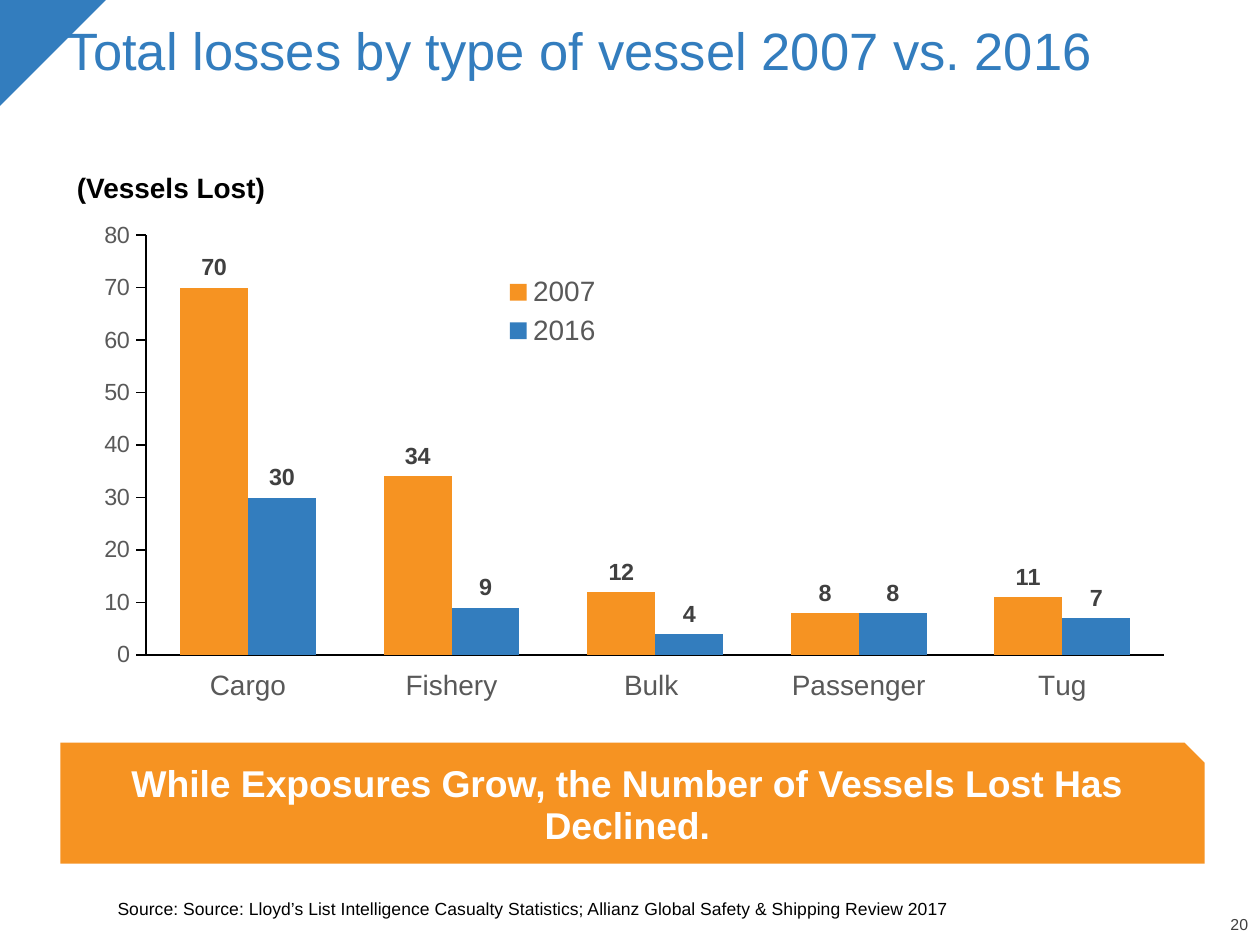
from pptx import Presentation
from pptx.chart.data import CategoryChartData
from pptx.dml.color import RGBColor
from pptx.enum.chart import XL_CHART_TYPE, XL_LABEL_POSITION, XL_LEGEND_POSITION, XL_TICK_LABEL_POSITION, XL_TICK_MARK
from pptx.enum.shapes import MSO_SHAPE as SHAPE
from pptx.enum.text import MSO_ANCHOR as ANCHOR, PP_ALIGN as ALIGN
from pptx.oxml import parse_xml
from pptx.oxml.ns import nsdecls
from pptx.util import Inches, Pt

BLUE = RGBColor(0x33, 0x7D, 0xBE)
ORANGE = RGBColor(0xF6, 0x93, 0x22)
BLACK = RGBColor(0, 0, 0)
WHITE = RGBColor(0xFF, 0xFF, 0xFF)
DARK_GRAY = RGBColor(0x40, 0x40, 0x40)
GRAY = RGBColor(0x59, 0x59, 0x59)
CHART_WIDTH, CHART_HEIGHT = 6.77, 3.21


def style(font, size, color, bold=False):
    font.name = "Arial"
    font.size = Pt(size)
    font.color.rgb = color
    font.bold = bold


def write(shape, text, size, color, bold=False, align=ALIGN.LEFT,
          anchor=ANCHOR.TOP, insets=(0.1, 0.05, 0.1, 0.05), spacing=0.9):
    frame = shape.text_frame
    frame.word_wrap = True
    frame.vertical_anchor = anchor
    frame.margin_left, frame.margin_top, frame.margin_right, frame.margin_bottom = map(Inches, insets)
    paragraph = frame.paragraphs[0]
    paragraph.text = text
    paragraph.alignment = align
    paragraph.line_spacing = spacing
    style(paragraph.font, size, color, bold)


prs = Presentation()
prs.slide_width = Inches(7.5)
prs.slide_height = Inches(7.5 * 3 / 4)
slide = prs.slides.add_slide(prs.slide_layouts[6])
shapes = slide.shapes

corner = shapes.add_shape(SHAPE.RIGHT_TRIANGLE, 0, 0, Inches(0.63), Inches(0.63))
corner.rotation = 90
banner = shapes.add_shape(SHAPE.SNIP_1_RECTANGLE, Inches(0.36), Inches(4.42), Inches(6.81), Inches(0.72))
for block, color in ((corner, BLUE), (banner, ORANGE)):
    block.shadow.inherit = False
    block.fill.solid()
    block.fill.fore_color.rgb = color
    block.line.fill.background()
write(banner, "While Exposures Grow, the Number of Vessels Lost Has Declined.", 16, WHITE, True,
      ALIGN.CENTER, ANCHOR.MIDDLE, (0.07, 0.04, 0.07, 0.07), 0.95)

title = shapes.add_textbox(Inches(0.3), Inches(0.15), Inches(7.1), Inches(0.78))
write(title, "Total losses by type of vessel 2007 vs. 2016", 22.5, BLUE, insets=(0.1, 0, 0.1, 0))
unit = shapes.add_textbox(Inches(0.36), Inches(0.99), Inches(1.34), Inches(0.24))
write(unit, "(Vessels Lost)", 12, BLACK, True)
source = shapes.add_textbox(Inches(0.7), Inches(5.13), Inches(6.3), Inches(0.34))
write(source, "Source: Source: Lloyd’s List Intelligence Casualty Statistics; "
      "Allianz Global Safety & Shipping Review 2017", 7.5, BLACK,
      anchor=ANCHOR.BOTTOM, insets=(0, 0, 0, 0))
page_number = shapes.add_textbox(Inches(7.07), Inches(5.46), Inches(0.36), Inches(0.1))
write(page_number, "20", 6.8, DARK_GRAY, align=ALIGN.RIGHT, anchor=ANCHOR.BOTTOM, insets=(0, 0, 0, 0))

losses = CategoryChartData(number_format="#,##0")
losses.categories = ["Cargo", "Fishery", "Bulk ", "Passenger", "Tug"]
losses.add_series("2007", (70, 34, 12, 8, 11))
losses.add_series("2016", (30, 9, 4, 8, 7))
chart = shapes.add_chart(XL_CHART_TYPE.COLUMN_CLUSTERED, Inches(0.28), Inches(1.21),
                         Inches(CHART_WIDTH), Inches(CHART_HEIGHT), losses).chart
style(chart.font, 10, BLACK)
chart.has_title = False

plot = chart.plots[0]
plot.gap_width = 100
plot.overlap = 0
plot.vary_by_categories = False
for series, color in zip(plot.series, (ORANGE, BLUE)):
    series.format.fill.solid()
    series.format.fill.fore_color.rgb = color
    labels = series.data_labels
    labels.show_value = True
    labels.position = XL_LABEL_POSITION.OUTSIDE_END
    labels.number_format = "#,##0"
    labels.number_format_is_linked = False
    style(labels.font, 10, DARK_GRAY, True)

vessel_axis, count_axis = chart.category_axis, chart.value_axis
for axis, size, tick in ((vessel_axis, 12, XL_TICK_MARK.NONE), (count_axis, 10, XL_TICK_MARK.OUTSIDE)):
    axis.has_major_gridlines = False
    axis.major_tick_mark = tick
    axis.minor_tick_mark = XL_TICK_MARK.NONE
    axis.format.line.color.rgb = BLACK
    axis.format.line.width = Pt(0.75)
    style(axis.tick_labels.font, size, GRAY)
vessel_axis.tick_label_position = XL_TICK_LABEL_POSITION.LOW
count_axis.minimum_scale = 0
count_axis.maximum_scale = 80
count_axis.major_unit = 10
count_axis.tick_labels.number_format = "0"
count_axis.tick_labels.number_format_is_linked = False

chart.has_legend = True
legend = chart.legend
legend.position = XL_LEGEND_POSITION.RIGHT
legend.include_in_layout = False
style(legend.font, 12, GRAY)

plot_area = chart._chartSpace.chart.plotArea
for old_layout in plot_area.findall("{*}layout") + legend._element.findall("{*}layout"):
    old_layout.getparent().remove(old_layout)
for parent, place, target, (left, top, width, height) in (
        (plot_area, 0, '<c:layoutTarget val="inner"/>', (0.59, 0.19, 6.06, 2.5)),
        (legend._element, 1, "", (2.51, 0.39, 1, 0.51))):
    parent.insert(place, parse_xml(
        f'<c:layout {nsdecls("c")}><c:manualLayout>{target}'
        '<c:xMode val="edge"/><c:yMode val="edge"/>'
        f'<c:x val="{left / CHART_WIDTH}"/><c:y val="{top / CHART_HEIGHT}"/>'
        f'<c:w val="{width / CHART_WIDTH}"/><c:h val="{height / CHART_HEIGHT}"/>'
        '</c:manualLayout></c:layout>'))

prs.save("out.pptx")
